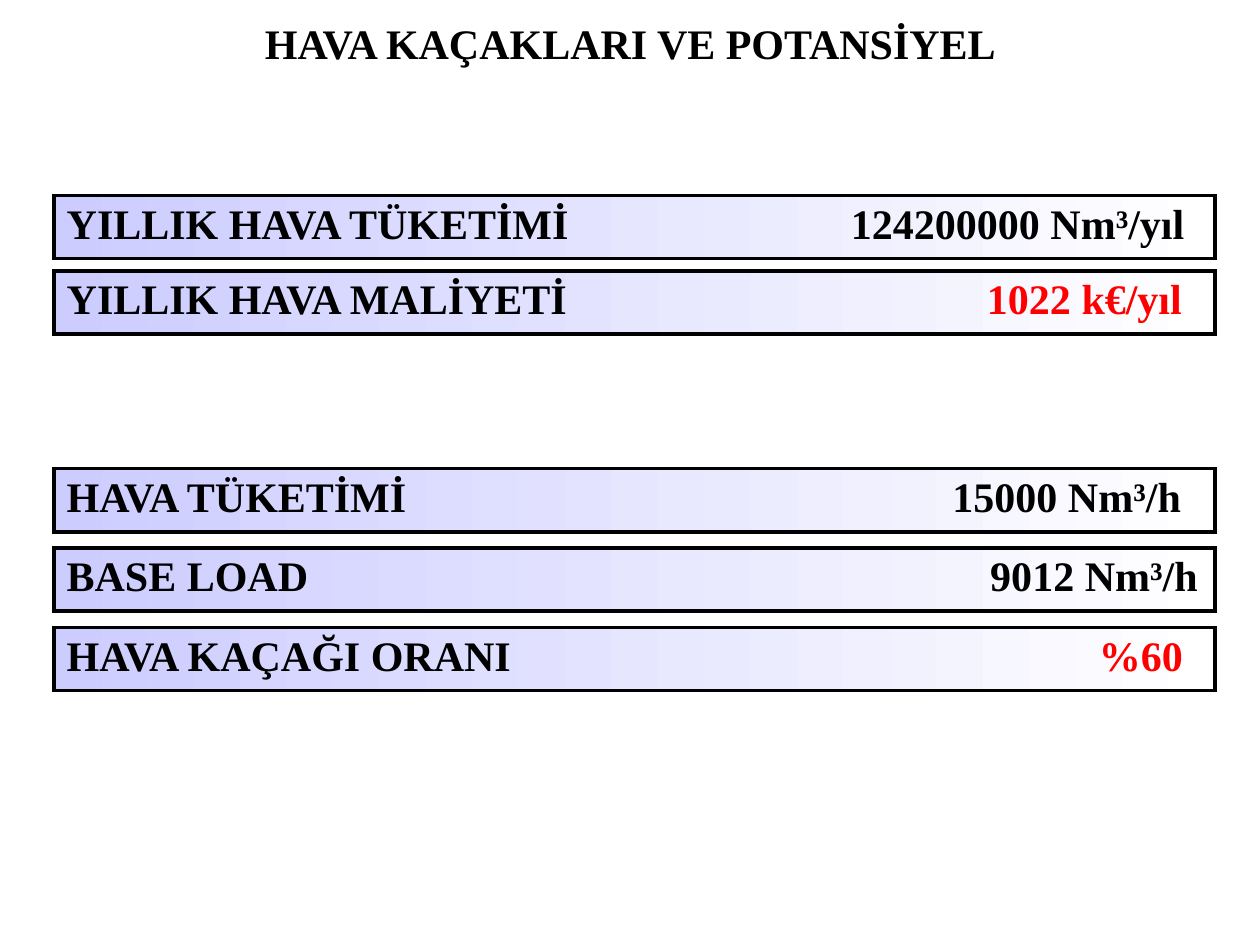
from lxml import etree
from pptx import Presentation
from pptx.dml.color import RGBColor
from pptx.enum.text import PP_ALIGN
from pptx.oxml.ns import qn
from pptx.util import Cm, Pt

TITLE = "HAVA KAÇAKLARI VE POTANSİYEL"
FONT = "Times New Roman"
BLACK, RED, LILAC, WHITE = "000000", "FF0000", "CCCCFF", "FFFFFF"

# label, value, value colour, right edge of value in cm
GROUPS = [
    (3.94, 1.52, [
        ("YILLIK HAVA TÜKETİMİ", "124200000 Nm³/yıl", BLACK, 22.53),
        ("YILLIK HAVA MALİYETİ", "1022 k€/yıl", RED, 22.48),
    ]),
    (9.45, 1.6, [
        ("HAVA TÜKETİMİ", "15000 Nm³/h", BLACK, 22.46),
        ("BASE LOAD", "9012 Nm³/h", BLACK, 22.8),
        ("HAVA KAÇAĞI ORANI", "%60", RED, 22.5),
    ]),
]
BAR_LEFT, BAR_WIDTH, BAR_HEIGHT = 1.09, 23.4, 1.27


def rgb(colour):
    return RGBColor.from_string(colour)


def style(paragraph):
    font = paragraph.font
    font.name, font.size, font.bold = FONT, Pt(24), True
    font.color.rgb = rgb(BLACK)


def add_borders(cell):
    properties = cell._tc.get_or_add_tcPr()
    for side in ("lnL", "lnR", "lnT", "lnB"):
        border = etree.SubElement(properties, qn(f"a:{side}"), w=str(Pt(2.25)))
        fill = etree.SubElement(border, qn("a:solidFill"))
        etree.SubElement(fill, qn("a:srgbClr"), val=BLACK)


def add_right_tab(paragraph, position):
    tabs = etree.Element(qn("a:tabLst"))
    etree.SubElement(tabs, qn("a:tab"), pos=str(Cm(position)), algn="r")
    paragraph._p.get_or_add_pPr().insert(0, tabs)


def add_bar(slide, top, label, value, colour, value_edge):
    table = slide.shapes.add_table(
        1, 1, Cm(BAR_LEFT), Cm(top), Cm(BAR_WIDTH), Cm(BAR_HEIGHT)).table
    table.first_row = table.horz_banding = False
    cell = table.cell(0, 0)
    add_borders(cell)
    cell.fill.gradient()
    cell.fill.gradient_angle = 0
    for stop, shade in zip(cell.fill.gradient_stops, (LILAC, WHITE)):
        stop.color.rgb = rgb(shade)
    paragraph = cell.text_frame.paragraphs[0]
    style(paragraph)
    add_right_tab(paragraph, value_edge)
    paragraph.add_run().text = f"{label}\t"
    amount = paragraph.add_run()
    amount.text = value
    if colour != BLACK:
        amount.font.color.rgb = rgb(colour)


def add_title(slide):
    heading = slide.shapes.add_textbox(Cm(3.71), Cm(0.13), Cm(18), Cm(1.27)).text_frame
    heading.word_wrap = True
    heading.margin_top, heading.margin_bottom = Cm(0.23), 0
    paragraph = heading.paragraphs[0]
    paragraph.text = TITLE
    paragraph.alignment = PP_ALIGN.CENTER
    style(paragraph)


def main():
    deck = Presentation()
    deck.slide_width, deck.slide_height = Cm(25.4), Cm(19.05)
    slide = deck.slides.add_slide(deck.slide_layouts[6])
    add_title(slide)
    for top, pitch, bars in GROUPS:
        for index, bar in enumerate(bars):
            add_bar(slide, top + index * pitch, *bar)
    deck.save("out.pptx")


if __name__ == "__main__":
    main()
